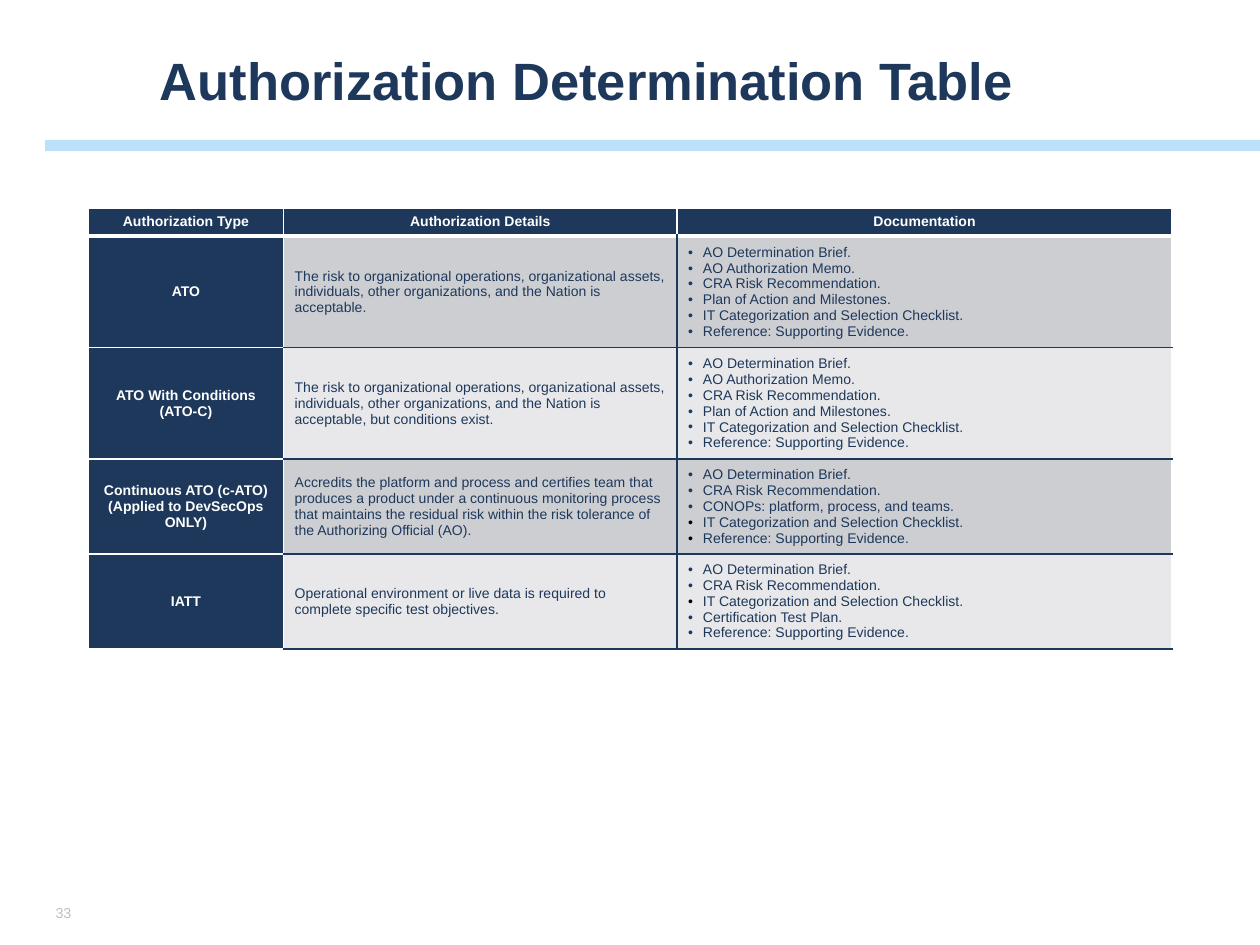
from lxml.etree import SubElement
from pptx import Presentation
from pptx.dml.color import RGBColor
from pptx.enum.shapes import MSO_SHAPE
from pptx.enum.text import MSO_ANCHOR, PP_ALIGN
from pptx.oxml.ns import qn
from pptx.util import Cm, Pt

NAVY, WHITE, BLACK = "1D385B", "FFFFFF", "000000"
SKY, GREY = "65BAF5", "BFBFBF"
BANDS = ["CDCED2", "E8E8EA"]

BRIEF = "AO Determination Brief."
MEMO = "AO Authorization Memo."
RISK = "CRA Risk Recommendation."
PLAN = "Plan of Action and Milestones."
CHECKLIST = "IT Categorization and Selection Checklist."
EVIDENCE = "Reference: Supporting Evidence."
FULL_SET = [BRIEF, MEMO, RISK, PLAN, CHECKLIST, EVIDENCE]

HEADERS = ["Authorization Type", "Authorization Details", "Documentation"]
ROWS = [
    ("ATO",
     "The risk to organizational operations, organizational assets, individuals, "
     "other organizations, and the Nation is acceptable.",
     FULL_SET, []),
    ("ATO With Conditions (ATO-C)",
     "The risk to organizational operations, organizational assets, individuals, "
     "other organizations, and the Nation is acceptable, but conditions exist.",
     FULL_SET, []),
    ("Continuous ATO (c-ATO)\n(Applied to DevSecOps ONLY)",
     "Accredits the platform and process and certifies team that produces a product "
     "under a continuous monitoring process that maintains the residual risk within "
     "the risk tolerance of the Authorizing Official (AO).",
     [BRIEF, RISK, "CONOPs: platform, process, and teams.", CHECKLIST, EVIDENCE],
     [CHECKLIST, EVIDENCE]),
    ("IATT",
     "Operational environment or live data is required to complete specific test "
     "objectives.",
     [BRIEF, RISK, CHECKLIST, "Certification Test Plan.", EVIDENCE],
     [CHECKLIST]),
]
COL_WIDTHS = [3.94, 7.93, 9.98]
ROW_HEIGHTS = [0.57, 2.11, 2.11, 1.8, 1.8]


def rgb(value):
    return RGBColor.from_string(value)


class Deck:
    font = "Arial"

    def __init__(self, prs):
        self.s = prs.slides.add_slide(prs.slide_layouts[5])

    def format(self, tf, size, color, bold=False, align=PP_ALIGN.LEFT):
        for p in tf.paragraphs:
            p.alignment = align
            for r in p.runs:
                r.font.name = self.font
                r.font.size = Pt(size)
                r.font.bold = bold
                r.font.color.rgb = rgb(color)

    def place(self, sp, left, top, width, height):
        sp.left, sp.top, sp.width, sp.height = map(Cm, (left, top, width, height))

    def title(self, text, *box):
        sp = self.s.shapes.title
        self.place(sp, *box)
        tf = sp.text_frame
        tf.text = text
        tf.vertical_anchor = MSO_ANCHOR.MIDDLE
        tf.paragraphs[0].line_spacing = 0.9
        self.format(tf, 30, NAVY, bold=True)

    def bar(self, color, alpha, *box):
        sp = self.s.shapes.add_shape(MSO_SHAPE.RECTANGLE, *map(Cm, box))
        sp.shadow.inherit = False
        sp.line.fill.background()
        sp.fill.solid()
        sp.fill.fore_color.rgb = rgb(color)
        clr = sp.fill._xPr.find(".//" + qn("a:srgbClr"))
        SubElement(clr, qn("a:alpha"), val=str(alpha * 1000))

    def text(self, text, size, color, *box):
        tf = self.s.shapes.add_textbox(*map(Cm, box)).text_frame
        tf.word_wrap = True
        tf.vertical_anchor = MSO_ANCHOR.MIDDLE
        tf.margin_left = tf.margin_right = Cm(0.18)
        tf.margin_top = tf.margin_bottom = Cm(0.1)
        tf.text = text
        self.format(tf, size, color)

    def bullet(self, p, color):
        pPr = p._p.get_or_add_pPr()
        pPr.set("marL", str(Cm(0.3)))
        pPr.set("indent", str(-Cm(0.3)))
        clr = SubElement(pPr, qn("a:buClr"))
        SubElement(clr, qn("a:srgbClr"), val=color)
        SubElement(pPr, qn("a:buFont"), typeface=self.font)
        SubElement(pPr, qn("a:buChar"), char="•")

    def borders(self, cell, **sides):
        tcPr = cell._tc.get_or_add_tcPr()
        for side in "LRTB":
            color, width = sides.get(side, (WHITE, 1))
            ln = SubElement(tcPr, qn("a:ln" + side), w=str(Pt(width)))
            fill = SubElement(ln, qn("a:solidFill"))
            SubElement(fill, qn("a:srgbClr"), val=color)

    def cell(self, cell, text, fill, color, bold, align, **sides):
        self.borders(cell, **sides)
        cell.fill.solid()
        cell.fill.fore_color.rgb = rgb(fill)
        cell.vertical_anchor = MSO_ANCHOR.MIDDLE
        cell.margin_left = cell.margin_right = Cm(0.22)
        cell.margin_top = cell.margin_bottom = Cm(0.11)
        cell.text_frame.text = text
        self.format(cell.text_frame, 8, color, bold, align)

    def label(self, cell, text, **sides):
        self.cell(cell, text, NAVY, WHITE, True, PP_ALIGN.CENTER, **sides)

    def body(self, cell, text, fill, **sides):
        self.cell(cell, text, fill, NAVY, False, PP_ALIGN.LEFT, **sides)

    def table(self, left, top):
        frame = self.s.shapes.add_table(
            len(ROW_HEIGHTS), len(COL_WIDTHS), Cm(left), Cm(top),
            Cm(sum(COL_WIDTHS)), Cm(sum(ROW_HEIGHTS)))
        table = frame.table
        table.horz_banding = False
        for col, width in zip(table.columns, COL_WIDTHS):
            col.width = Cm(width)
        for row, height in zip(table.rows, ROW_HEIGHTS):
            row.height = Cm(height)
        thick, thin = (WHITE, 3), (NAVY, 1)
        for c, text in enumerate(HEADERS):
            self.label(table.cell(0, c), text, B=thick)
        for i, (kind, details, documents, dark) in enumerate(ROWS):
            kind_cell, details_cell, docs_cell = table.rows[i + 1].cells
            fill = BANDS[i % 2]
            edge = thin if i else thick
            self.label(kind_cell, kind, T=(WHITE, 1) if i else thick)
            self.body(details_cell, details, fill, T=edge, R=thin, B=thin)
            self.body(docs_cell, "\n".join(documents), fill, L=thin, T=edge, B=thin)
            for p in docs_cell.text_frame.paragraphs:
                self.bullet(p, BLACK if p.text in dark else NAVY)


def main():
    prs = Presentation()
    prs.slide_width, prs.slide_height = Cm(25.4), Cm(19.05)
    deck = Deck(prs)
    deck.bar(SKY, 43, 0.91, 2.82, 24.49, 0.23)
    deck.text("33", 8.2, GREY, 0.94, 18.08, 0.81, 0.66)
    deck.title("Authorization Determination Table", 2.97, 0.84, 21.87, 1.7)
    deck.table(1.78, 4.19)
    prs.save("out.pptx")


if __name__ == "__main__":
    main()
